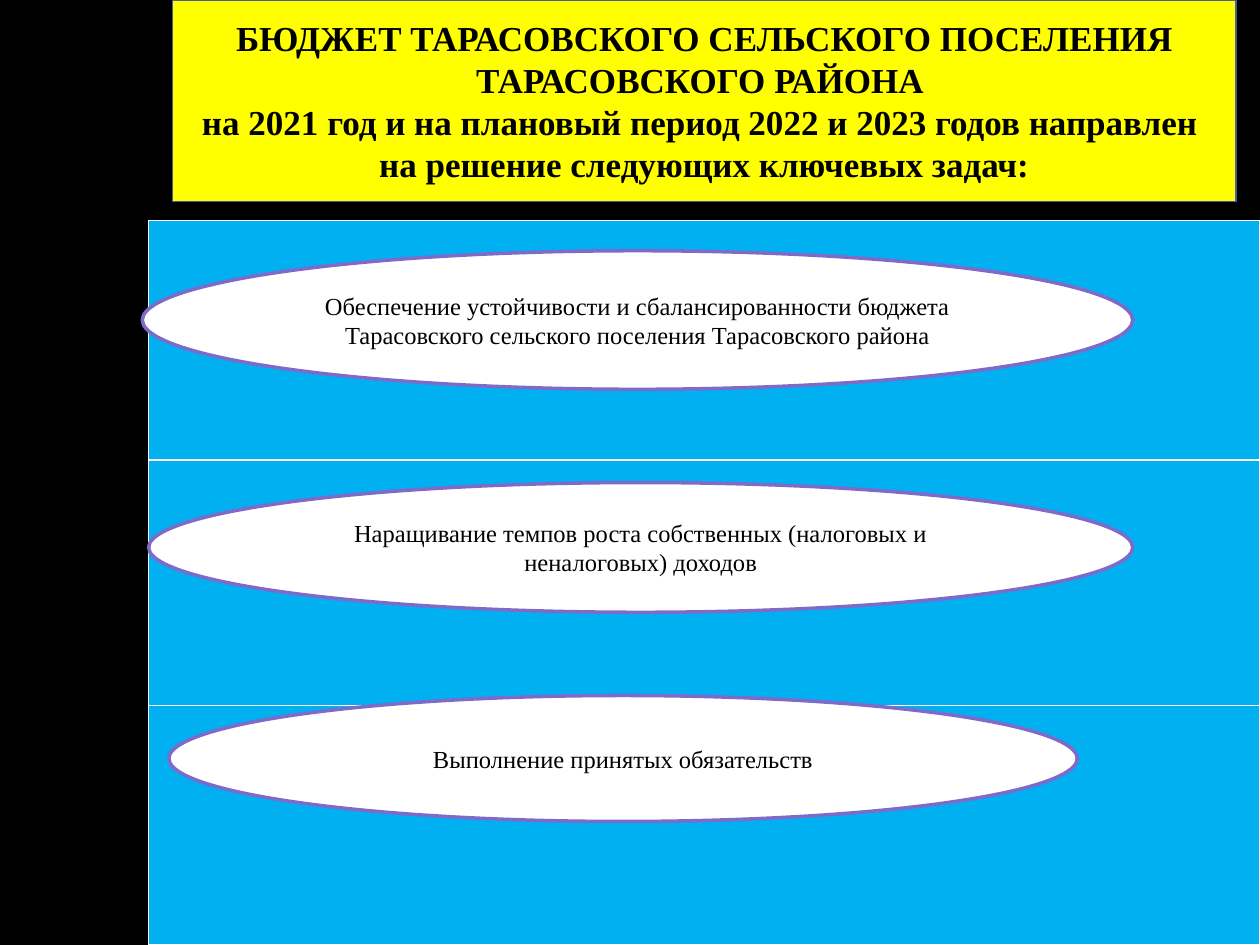
from pptx import Presentation
from pptx.dml.color import RGBColor
from pptx.enum.shapes import MSO_SHAPE
from pptx.enum.text import MSO_ANCHOR, PP_ALIGN
from pptx.util import Inches, Pt

RECT, OVAL = MSO_SHAPE.RECTANGLE, MSO_SHAPE.OVAL
MIDDLE, CENTER = MSO_ANCHOR.MIDDLE, PP_ALIGN.CENTER
BLACK = RGBColor(0x00, 0x00, 0x00)
WHITE = RGBColor(0xFF, 0xFF, 0xFF)
YELLOW = RGBColor(0xFF, 0xFF, 0x00)
NAVY = RGBColor(0x46, 0x5F, 0x9A)
SKY = RGBColor(0x00, 0xB0, 0xF0)
VIOLET = RGBColor(0x7E, 0x6B, 0xC9)
FONT = "Times New Roman"

deck = Presentation()
deck.slide_width, deck.slide_height = Inches(10), Inches(7.5)
slide = deck.slides.add_slide(deck.slide_layouts[6])
slide.background.fill.solid()
slide.background.fill.fore_color.rgb = BLACK


def add_box(kind, place, text, fill, line, width, size, bold):
    box = slide.shapes.add_shape(kind, *map(Inches, place))
    box.shadow.inherit = False
    box.fill.solid()
    box.fill.fore_color.rgb = fill
    box.line.color.rgb = line
    box.line.width = Pt(width)
    frame = box.text_frame
    frame.word_wrap = True
    frame.vertical_anchor = MIDDLE
    frame.text = text
    for par in frame.paragraphs:
        par.alignment = CENTER
        for run in par.runs:
            run.font.name = FONT
            run.font.size = Pt(size)
            run.font.bold = bold
            run.font.color.rgb = BLACK


title = (
    "БЮДЖЕТ ТАРАСОВСКОГО СЕЛЬСКОГО ПОСЕЛЕНИЯ ТАРАСОВСКОГО РАЙОНА \v"
    "на 2021 год и на плановый период 2022 и 2023 годов направлен \v"
    "на решение следующих ключевых задач:"
)
add_box(RECT, (1.37, 0, 8.44, 1.6), title, YELLOW, NAVY, 0.75, 20, True)

heights = (1.9, 1.95, 1.9)
left, top = 1.18, 7.5 - sum(heights)
place = (left, top, 10 - left, sum(heights))
table = slide.shapes.add_table(len(heights), 1, *map(Inches, place)).table
for row, height in zip(table.rows, heights):
    row.height = Inches(height)
    cell = row.cells[0]
    cell.fill.solid()
    cell.fill.fore_color.rgb = SKY

tasks = (
    ((1.34, 5.52, 7.21, 1), "Выполнение принятых обязательств"),
    ((1.13, 1.99, 7.86, 1.1),
     "Обеспечение устойчивости и сбалансированности бюджета "
     "Тарасовского сельского поселения Тарасовского района"),
    ((1.18, 3.83, 7.81, 1.03),
     "Наращивание темпов роста собственных (налоговых и неналоговых) доходов"),
)
for place, text in tasks:
    add_box(OVAL, place, text, WHITE, VIOLET, 2, 14, False)

deck.save("out.pptx")
